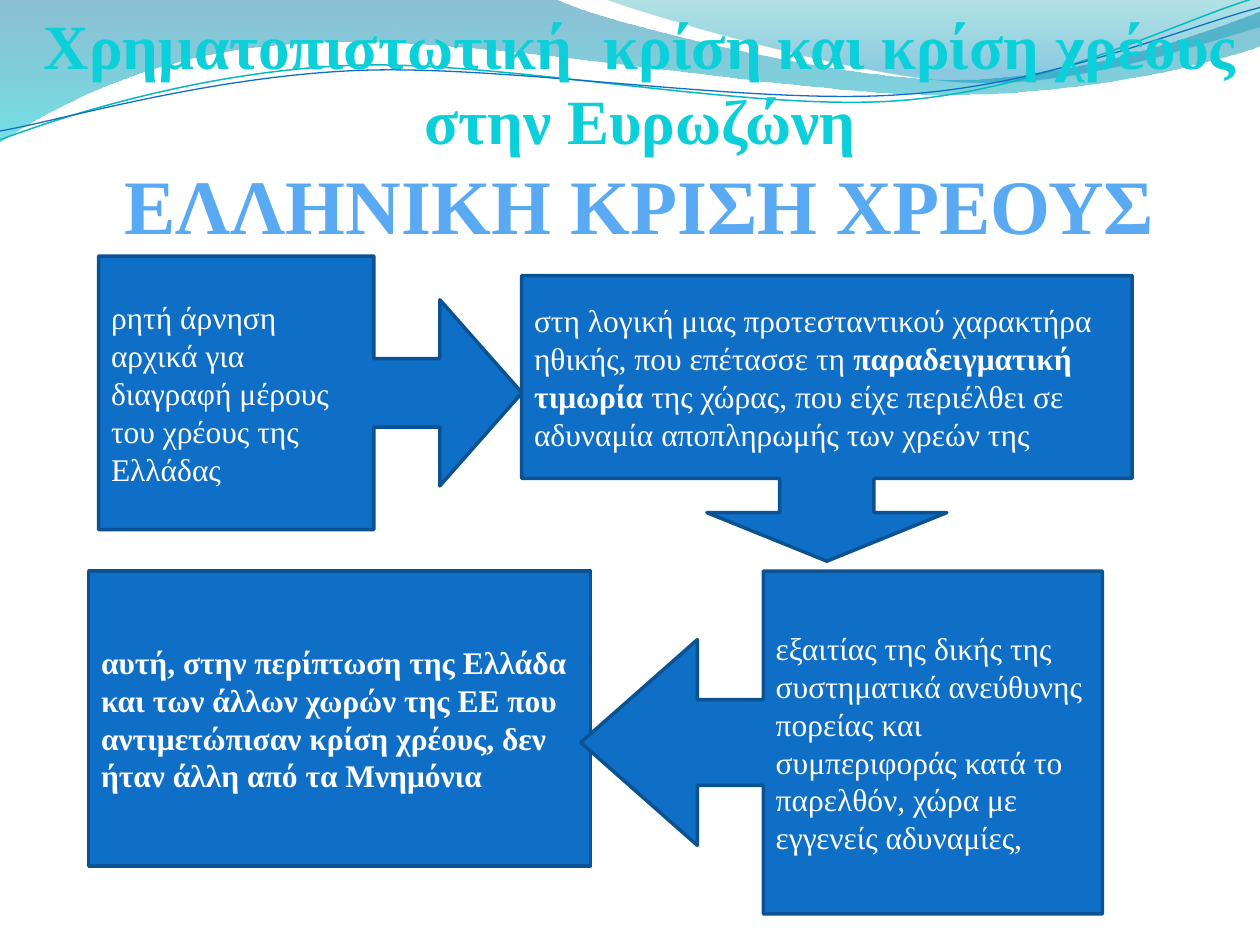
from lxml import etree
from pptx import Presentation
from pptx.dml.color import RGBColor
from pptx.enum.shapes import MSO_SHAPE
from pptx.enum.text import MSO_ANCHOR, MSO_AUTO_SIZE, PP_ALIGN
from pptx.oxml.ns import qn
from pptx.util import Inches, Pt

RECT = MSO_SHAPE.RECTANGLE
RIGHT = MSO_SHAPE.RIGHT_ARROW_CALLOUT
DOWN = MSO_SHAPE.DOWN_ARROW_CALLOUT
LEFT = MSO_SHAPE.LEFT_ARROW_CALLOUT
TOP, MIDDLE = MSO_ANCHOR.TOP, MSO_ANCHOR.MIDDLE
CENTER, ALIGN_LEFT = PP_ALIGN.CENTER, PP_ALIGN.LEFT

COLS, ROWS = 100, 75
CELL = Inches(0.1)
FONT = "Times New Roman"

# Points are percent of the header box. Six numbers make a Bezier curve, two a line.
BANDS = [
    ([(0, 0), (44, -1), (47.6, 17, 66.4, 63, 75.8, 63), (85.3, 63, 95.8, 26, 100, 9),
      (100.1, 36), (98.3, 44, 87, 76, 74.6, 75), (62.2, 75, 38.2, 28, 25.7, 34),
      (12.9, 36, 4.6, 83, -0.1, 113), (0, 0)],
     [(0, "0074A1", 45), (1, "00C6CF", 55)]),
    ([(47.9, -1), (50.9, 11, 68.2, 62, 76.9, 65), (85.6, 69, 96.1, 32, 100, 21),
      (100, 0), (47.9, -1)],
     [(0, "00A1A9", 30), (0.8, "008BBF", 45)]),
]
WAVES = [
    ([(0, 111), (4.8, 93, 15.8, 57, 27.7, 52), (39.5, 47, 59.3, 89, 71.3, 80),
      (83.3, 71, 93.8, 15, 99.8, -2)], "0AB8BF", 0.85),
    ([(0, 104), (4.7, 96, 16.4, 61, 28.3, 56), (40.3, 51, 59.7, 84, 71.7, 75),
      (83.6, 67, 94.1, 21, 100, 6)], "0F6FC6", 0.75),
]
TITLE = [
    ("Χρηματοπιστωτική  κρίση και κρίση χρέους στην Ευρωζώνη", 36, "0BD0D9"),
    ("ΕΛΛΗΝΙΚΗ ΚΡΙΣΗ ΧΡΕΟΥΣ", 44, "59AAF2"),
]
# Preset, box in grid cells, adjustments, runs (text, bold)
STEPS = [
    (RECT, (7.04, 45.33, 39.84, 23.4), [],
     [("αυτή, στην περίπτωση της Ελλάδα και των άλλων χωρών της ΕΕ που "
       "αντιμετώπισαν κρίση χρέους, δεν ήταν άλλη από τα Μνημόνια", True)]),
    (RIGHT, (7.83, 20.32, 33.6, 21.72), [0.25, 0.34, 0.3, 0.65],
     [("ρητή άρνηση αρχικά για διαγραφή μέρους του χρέους της Ελλάδας", False)]),
    (DOWN, (41.4, 21.87, 48.45, 22.67), [0.33, 0.42, 0.17, 0.71],
     [("στη λογική μιας προτεσταντικού χαρακτήρα ηθικής, που επέτασσε τη ", False),
      ("παραδειγματική τιμωρία ", True),
      ("της χώρας, που είχε περιέλθει σε αδυναμία αποπληρωμής των χρεών της", False)]),
    (LEFT, (46.1, 45.33, 41.4, 27.2), [0.25, 0.3, 0.34, 0.65],
     [("εξαιτίας της δικής της συστηματικά ανεύθυνης πορείας και συμπεριφοράς "
       "κατά το παρελθόν, χώρα με εγγενείς αδυναμίες,", False)]),
]


def rgb(value):
    return RGBColor.from_string(value)


def cells(box):
    return [int(v * CELL) for v in box]


def set_all(target, **values):
    for name, value in values.items():
        setattr(target, name, value)


def add_run(p, text, size, color, bold):
    r = p.add_run()
    r.text = text
    set_all(r.font, name=FONT, size=Pt(size), bold=bold)
    r.font.color.rgb = rgb(color)


def bend(sp, path):
    """Join each three line segments that stand for a curve into one Bezier."""
    segments = iter(list(sp.element.spPr.iter(qn("a:lnTo"))))
    for part in path[1:]:
        group = [next(segments) for _ in range(len(part) // 2)]
        if len(group) == 3:
            curve = etree.Element(qn("a:cubicBezTo"))
            group[0].addprevious(curve)
            for segment in group:
                curve.append(segment[0])
                segment.getparent().remove(segment)


def add_outline(s, box, path, close):
    left, top, width, height = cells(box)
    points = [(int(left + part[i] * width / 100), int(top + part[i + 1] * height / 100))
              for part in path for i in range(0, len(part), 2)]
    builder = s.shapes.build_freeform(*points[0])
    builder.add_line_segments(points[1:], close=close)
    sp = builder.convert_to_shape()
    bend(sp, path)
    sp.shadow.inherit = False
    return sp


def fill_gradient(sp, stops):
    """Fill from top to bottom with stops of (position, colour, opacity percent)."""
    sp.fill.gradient()
    sp.fill.gradient_angle = 270
    for stop, (position, color, _) in zip(sp.fill.gradient_stops, stops):
        stop.position = position
        stop.color.rgb = rgb(color)
    for clr, (_, _, opacity) in zip(sp.element.spPr.iter(qn("a:srgbClr")), stops):
        etree.SubElement(clr, qn("a:alpha")).set("val", str(opacity * 1000))


def add_header(s, box):
    for path, stops in BANDS:
        sp = add_outline(s, box, path, True)
        fill_gradient(sp, stops)
        sp.line.fill.background()
    for path, color, width in WAVES:
        sp = add_outline(s, box, path, False)
        sp.fill.background()
        sp.line.color.rgb = rgb(color)
        sp.line.width = Pt(width)


def add_title(s, box):
    """Fill the title placeholder and bring it in front of the header."""
    title = s.shapes.title
    set_all(title, **dict(zip(("left", "top", "width", "height"), cells(box))))
    tf = title.text_frame
    set_all(tf, word_wrap=True, auto_size=MSO_AUTO_SIZE.NONE, vertical_anchor=TOP)
    for i, (text, size, color) in enumerate(TITLE):
        p = tf.add_paragraph() if i else tf.paragraphs[0]
        p.alignment = CENTER
        add_run(p, text, size, color, True)
    title.element.getparent().append(title.element)


def add_step(s, preset, box, adjustments, runs):
    sp = s.shapes.add_shape(preset, *cells(box))
    for i, value in enumerate(adjustments):
        sp.adjustments[i] = value
    sp.shadow.inherit = False
    sp.fill.solid()
    sp.fill.fore_color.rgb = rgb("0F6FC6")
    sp.line.color.rgb = rgb("0B5292")
    sp.line.width = Pt(2)
    tf = sp.text_frame
    set_all(tf, word_wrap=True, vertical_anchor=MIDDLE)
    p = tf.paragraphs[0]
    p.alignment = ALIGN_LEFT
    for text, bold in runs:
        add_run(p, text, 18, "FFFFFF", bold)


def main():
    prs = Presentation()
    prs.slide_width, prs.slide_height = COLS * CELL, ROWS * CELL
    s = prs.slides.add_slide(prs.slide_layouts[5])
    add_header(s, (0, 0, COLS, 10))
    add_title(s, (0, 0, 101.6, 20.5))
    for step in STEPS:
        add_step(s, *step)
    prs.save("out.pptx")


if __name__ == "__main__":
    main()
